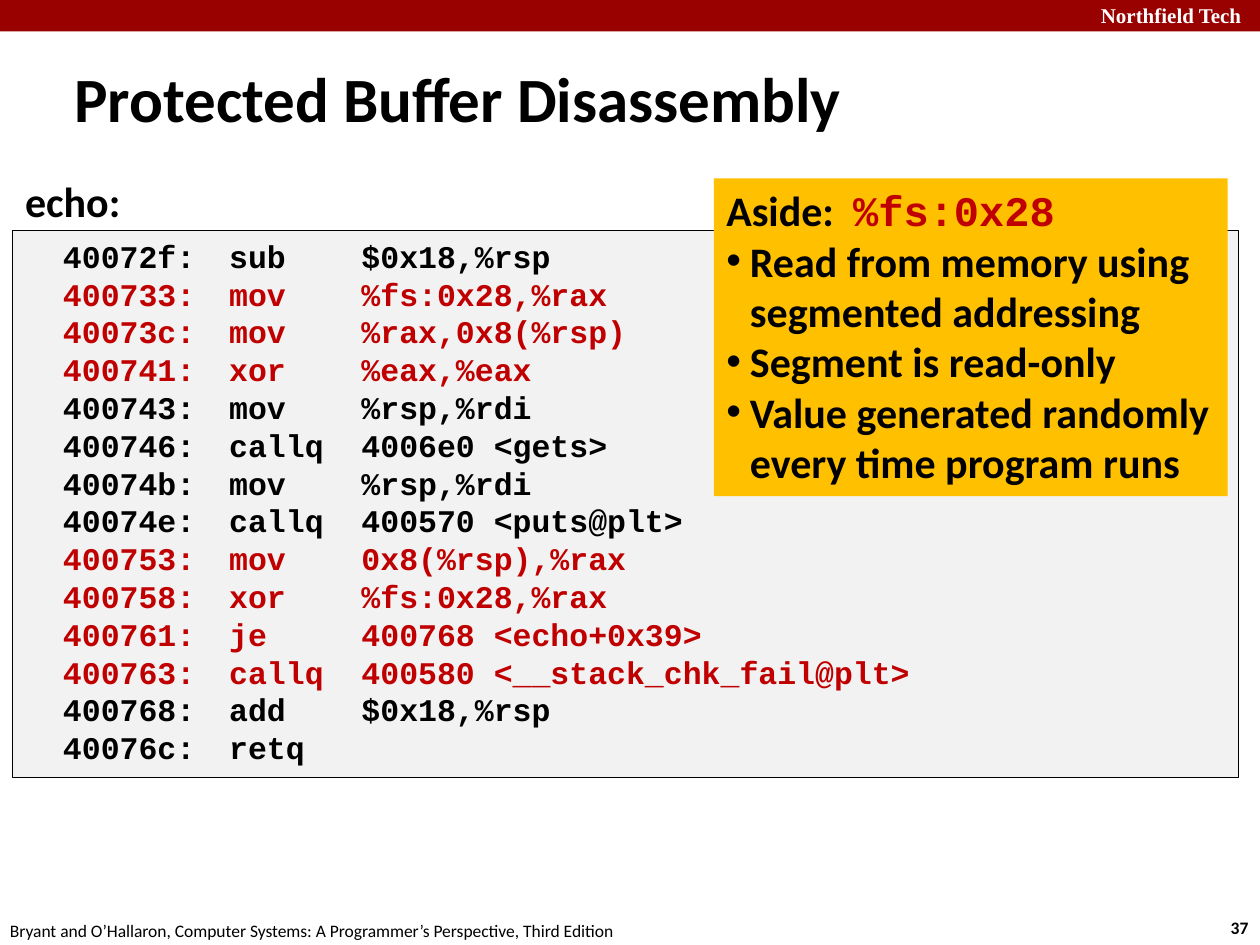
from pptx import Presentation
from pptx.dml.color import RGBColor
from pptx.enum.shapes import MSO_SHAPE as Shape
from pptx.enum.text import MSO_ANCHOR as Anchor, PP_ALIGN as Align
from pptx.oxml.ns import qn
from pptx.util import Pt
from lxml.etree import SubElement

BLACK, RED = "000000", "C00000"


def style(span, size, color=BLACK, bold=True, name="Calibri"):
    span.font.size = Pt(size)
    span.font.bold = bold
    span.font.name = name
    span.font.color.rgb = RGBColor.from_string(color)


def add_panel(page, left, top, width, height, fill, line=None):
    panel = page.shapes.add_shape(Shape.RECTANGLE, Pt(left), Pt(top), Pt(width), Pt(height))
    panel.shadow.inherit = False
    panel.fill.solid()
    panel.fill.fore_color.rgb = RGBColor.from_string(fill)
    if line:
        panel.line.color.rgb = RGBColor.from_string(line)
        panel.line.width = Pt(1)
    else:
        panel.line.fill.background()
    panel.text_frame.word_wrap = True
    panel.text_frame.vertical_anchor = Anchor.TOP
    return panel


deck = Presentation()
deck.slide_width, deck.slide_height = Pt(720), Pt(540)
page = deck.slides.add_slide(deck.slide_layouts[5])

# Top band
add_panel(page, 0, 0, 720, 18, "990000")

# Title
title = page.shapes.title
title.left, title.top, title.width, title.height = Pt(35.3), Pt(33.1), Pt(558.7), Pt(45.4)
title.text_frame.text = "Protected Buffer Disassembly"
title.text_frame.vertical_anchor = Anchor.MIDDLE
title.text_frame.paragraphs[0].alignment = Align.LEFT
style(title.text_frame.paragraphs[0].runs[0], 36)

# Disassembly listing: address, instruction, operands, colour
listing = [
    ("40072f", "sub", "$0x18,%rsp", BLACK),
    ("400733", "mov", "%fs:0x28,%rax", RED),
    ("40073c", "mov", "%rax,0x8(%rsp)", RED),
    ("400741", "xor", "%eax,%eax", RED),
    ("400743", "mov", "%rsp,%rdi", BLACK),
    ("400746", "callq", "4006e0 <gets>", BLACK),
    ("40074b", "mov", "%rsp,%rdi", BLACK),
    ("40074e", "callq", "400570 <puts@plt>", BLACK),
    ("400753", "mov", "0x8(%rsp),%rax", RED),
    ("400758", "xor", "%fs:0x28,%rax", RED),
    ("400761", "je", "400768 <echo+0x39>", RED),
    ("400763", "callq", "400580 <__stack_chk_fail@plt>", RED),
    ("400768", "add", "$0x18,%rsp", BLACK),
    ("40076c", "retq", "", BLACK),
]
code_box = add_panel(page, 7.2, 131.8, 700.6, 312.5, "F2F2F2", BLACK)
frame = code_box.text_frame
frame.margin_left = Pt(28.8)
frame.text = "\n".join(
    f"{address}:\t{instruction}\t{operands}".rstrip()
    for address, instruction, operands, color in listing
)
for para, row in zip(frame.paragraphs, listing):
    para.alignment = Align.LEFT
    style(para.runs[0], 18, row[3], name="Courier New")
    tabs = SubElement(para._p.get_or_add_pPr(), qn("a:tabLst"))
    for position in (95, 170.6):
        SubElement(tabs, qn("a:tab"), pos=str(Pt(position)), algn="l")

# Labels: text, left, top, width, height, size, colour, bold, font
labels = [
    ("Northfield Tech", 622, -2.2, 103, 21.8, 12, "FFFFFF", True, "Times New Roman"),
    ("37", 696.2, 520.6, 26.6, 19.4, 10, BLACK, True, "Calibri"),
    ("Bryant and O’Hallaron, Computer Systems: A Programmer’s Perspective, Third Edition",
     -1.4, 522, 366, 19.4, 10, BLACK, False, "Calibri"),
    ("echo:", 7.2, 96.5, 70, 36, 24, BLACK, True, "Calibri"),
]
for text, left, top, width, height, *look in labels:
    box = page.shapes.add_textbox(Pt(left), Pt(top), Pt(width), Pt(height))
    box.text_frame.word_wrap = True
    box.text_frame.text = text
    style(box.text_frame.paragraphs[0].runs[0], *look)

# Aside
aside = add_panel(page, 408, 102, 293.6, 181.5, "FFC000")
heading = aside.text_frame.paragraphs[0]
heading.alignment = Align.LEFT
for text, color, name in (("Aside:  ", BLACK, "Calibri"), ("%fs:0x28", RED, "Courier New")):
    span = heading.add_run()
    span.text = text
    style(span, 24, color, name=name)
for text in (
    "Read from memory using \vsegmented addressing",
    "Segment is read-only",
    "Value generated randomly\vevery time program runs",
):
    para = aside.text_frame.add_paragraph()
    para.text = text
    para.alignment = Align.LEFT
    for span in para.runs:
        style(span, 24)
    props = para._p.get_or_add_pPr()
    props.set("marL", str(Pt(13.5)))
    props.set("indent", str(-Pt(13.5)))
    SubElement(props, qn("a:buFont"), typeface="Arial")
    SubElement(props, qn("a:buChar"), char="•")

deck.save("out.pptx")
